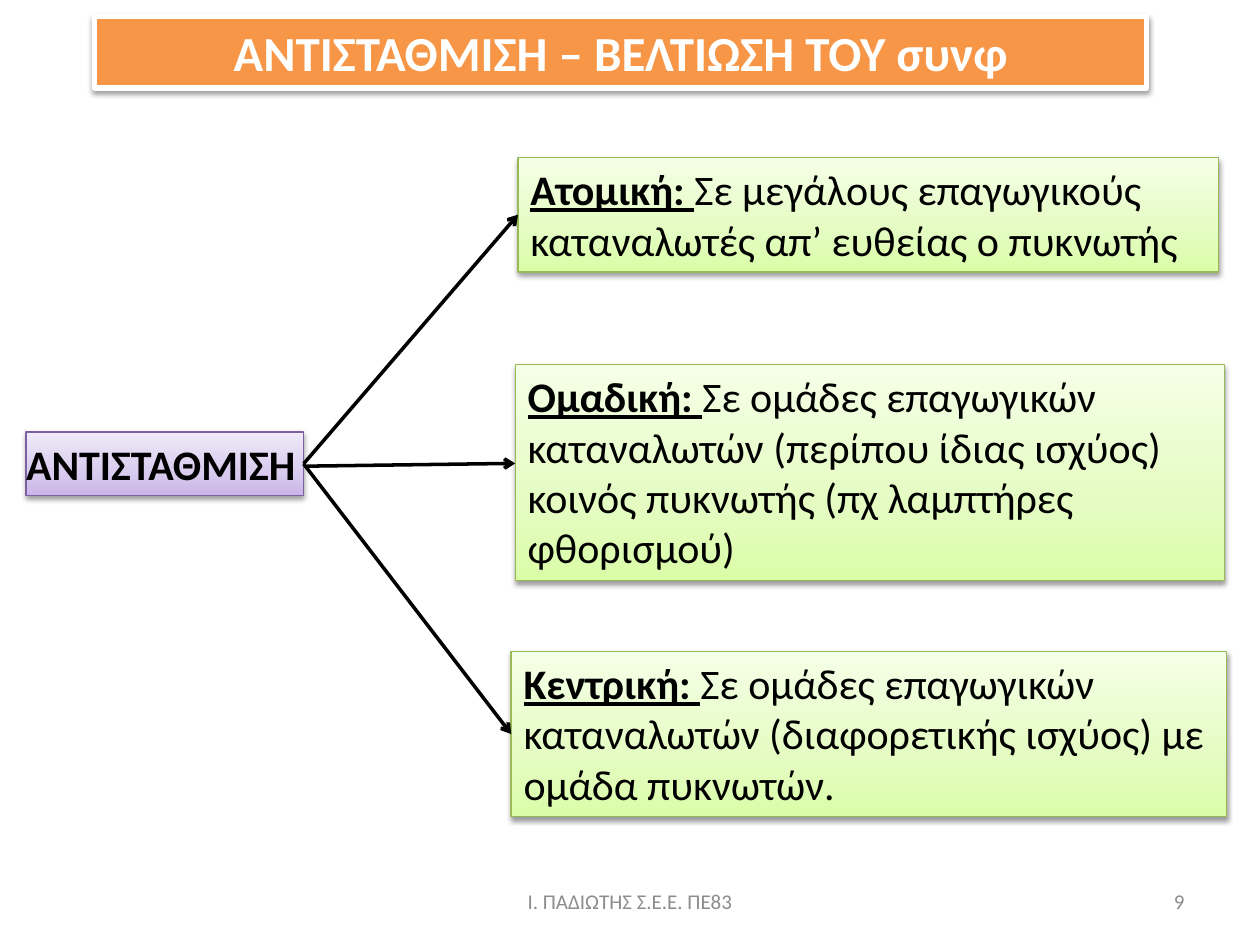
from copy import deepcopy
from pptx import Presentation
from pptx.dml.color import RGBColor as RGB
from pptx.enum.shapes import MSO_CONNECTOR as LINE, MSO_SHAPE as SHAPE
from pptx.enum.text import MSO_ANCHOR as ANCHOR, MSO_AUTO_SIZE as FIT, PP_ALIGN as ALIGN
from pptx.oxml import parse_xml
from pptx.oxml.ns import nsdecls, qn
from pptx.util import Pt

INK = {
    "black": "000000", "white": "FFFFFF", "grey": "8C8C8C", "orange": "F79646",
    "violet": "7D60A0", "green": "98B955",
}
FADE = {
    "violet": ("C9B5E8", "D8CBEE", "F0EAF9"),
    "green": ("DAFDA7", "E4FCC2", "F5FFE7"),
}
STOPS = (0, 0.35, 1)
SHADE = (
    f'<a:outerShdw {nsdecls("a")} blurRad="{Pt(3.1)}" dist="{Pt(1.6)}" dir="5400000" '
    'rotWithShape="0"><a:srgbClr val="000000"><a:alpha val="38000"/></a:srgbClr></a:outerShdw>'
)


def ink(name):
    return RGB.from_string(INK[name])


def write(frame, text, head="", size=24, color="black", bold=False, align=ALIGN.LEFT):
    """Fill a text frame; head is an underlined bold lead-in."""
    frame.word_wrap = True
    para = frame.paragraphs[0]
    para.alignment = align
    for part, lead in ((head, True), (text, False)):
        if part:
            run = para.add_run()
            run.text = part
            font = run.font
            font.name, font.size = "Calibri", Pt(size)
            font.bold, font.underline = bold or lead, lead
            font.color.rgb = ink(color)


class Deck:
    font = "Calibri"

    def __init__(self, wide, high):
        self.file = Presentation()
        self.file.slide_width, self.file.slide_height = Pt(wide), Pt(high)
        self.slide = self.file.slides.add_slide(self.file.slide_layouts[6])

    def box(self, x, y, w, h, text, edge, weight=0.75, fill=None, inset=7.2, **form):
        """Shadowed box: solid when fill is given, else faded in the edge colour."""
        box = self.slide.shapes.add_shape(SHAPE.RECTANGLE, Pt(x), Pt(y), Pt(w), Pt(h))
        box.line.color.rgb, box.line.width = ink(edge), Pt(weight)
        if fill:
            box.fill.solid()
            box.fill.fore_color.rgb = ink(fill)
        else:
            self.fade(box, FADE[edge])
        box.shadow.inherit = False
        box._element.spPr.find(qn("a:effectLst")).append(parse_xml(SHADE))
        frame = box.text_frame
        frame.margin_left = frame.margin_right = Pt(inset)
        frame.vertical_anchor = ANCHOR.TOP
        write(frame, text, **form)
        frame.auto_size = FIT.SHAPE_TO_FIT_TEXT
        return box

    def fade(self, box, tints):
        box.fill.gradient()
        box.fill.gradient_angle = 90
        first = box._element.spPr.find(".//" + qn("a:gs"))
        first.addnext(deepcopy(first))
        for stop, place, tint in zip(box.fill.gradient_stops, STOPS, tints):
            stop.position = place
            stop.color.rgb = RGB.from_string(tint)

    def arrow(self, x1, y1, x2, y2):
        line = self.slide.shapes.add_connector(LINE.STRAIGHT, Pt(x1), Pt(y1), Pt(x2), Pt(y2))
        line.line.color.rgb, line.line.width = ink("black"), Pt(2)
        line.line._get_or_add_ln().append(parse_xml(f'<a:tailEnd {nsdecls("a")} type="arrow"/>'))
        line._element.spPr.append(parse_xml(f'<a:effectLst {nsdecls("a")}/>'))
        return line

    def link(self, start, end):
        """Arrow from the right side of start to the left side of end."""
        line = self.arrow(0, 0, 0, 0)
        line.begin_connect(start, 3)
        line.end_connect(end, 1)

    def note(self, x, y, w, h, text, align):
        frame = self.slide.shapes.add_textbox(Pt(x), Pt(y), Pt(w), Pt(h)).text_frame
        frame.vertical_anchor = ANCHOR.MIDDLE
        write(frame, text, size=12, color="grey", align=align)


def main():
    deck = Deck(720, 540)
    deck.box(54, 9.4, 601.2, 41, "ΑΝΤΙΣΤΑΘΜΙΣΗ – ΒΕΛΤΙΩΣΗ ΤΟΥ συνφ", "white", 3, "orange",
             size=28, color="white", bold=True, align=ALIGN.CENTER)
    hub = deck.box(14.9, 246.9, 158.6, 36.3, "ΑΝΤΙΣΤΑΘΜΙΣΗ", "violet", inset=0, bold=True)
    kinds = (
        (296, 90, 400.3, 65.4, "Ατομική: ",
         "Σε μεγάλους επαγωγικούς καταναλωτές απ’ ευθείας ο πυκνωτής"),
        (294.4, 208.3, 405.2, 123.6, "Ομαδική: ",
         "Σε ομάδες επαγωγικών καταναλωτών (περίπου ίδιας ισχύος) "
         "κοινός πυκνωτής (πχ λαμπτήρες φθορισμού)"),
        (292.1, 372.2, 408.7, 94.5, "Κεντρική: ",
         "Σε ομάδες επαγωγικών καταναλωτών (διαφορετικής ισχύος) με ομάδα πυκνωτών."),
    )
    single, group, main_box = [
        deck.box(*place, text, "green", head=head) for *place, head, text in kinds
    ]
    deck.link(hub, single)
    deck.arrow(175.4, 266.4, 294.4, 264.8)
    deck.link(hub, main_box)
    deck.note(516, 500.5, 168, 28.75, "9", ALIGN.RIGHT)
    deck.note(246, 500.5, 228, 28.75, "Ι. ΠΑΔΙΩΤΗΣ Σ.Ε.Ε. ΠΕ83", ALIGN.CENTER)
    deck.file.save("out.pptx")


if __name__ == "__main__":
    main()
